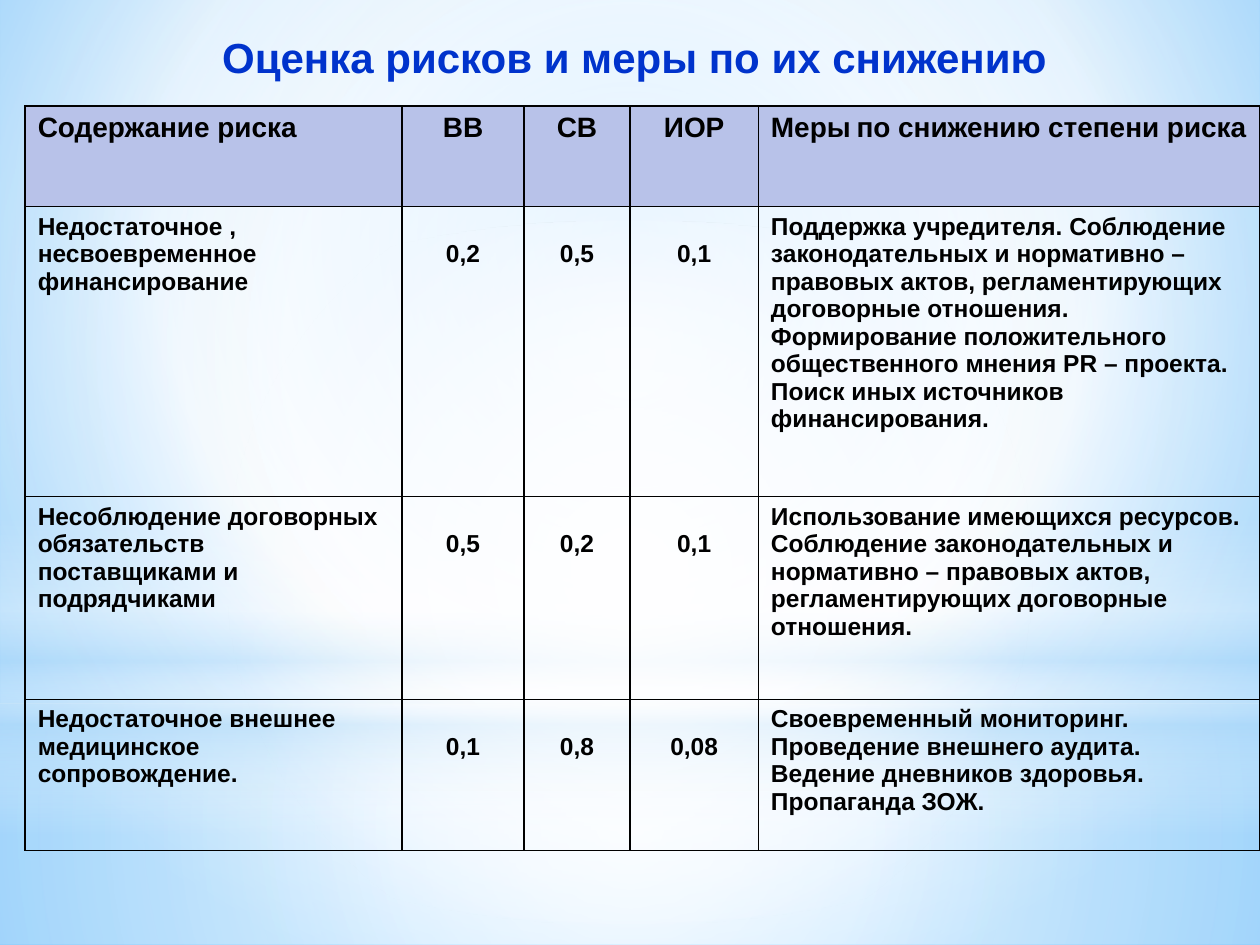
from pptx import Presentation
from pptx.dml.color import RGBColor
from pptx.enum.shapes import MSO_SHAPE
from pptx.enum.text import PP_ALIGN
from pptx.oxml import parse_xml
from pptx.oxml.ns import nsdecls, qn
from pptx.util import Pt

RECTANGLE, OVAL = MSO_SHAPE.RECTANGLE, MSO_SHAPE.OVAL
LEFT, CENTER = PP_ALIGN.LEFT, PP_ALIGN.CENTER
WIDTH, HEIGHT = 720, 540
CENTRED = (50, 50, 50, 50)
WHITE, SKY = "FFFFFF", "B4DCFA"

HEADINGS = ["Содержание риска", "ВВ", "СВ", "ИОР",
            [("Меры", 16), (" ", 12), ("по снижению степени риска", 16)]]
RISKS = [
    ["Недостаточное , несвоевременное финансирование", "0,2", "0,5", "0,1",
     "Поддержка учредителя. Соблюдение законодательных и нормативно – правовых актов, "
     "регламентирующих договорные отношения. Формирование положительного общественного "
     "мнения PR – проекта. Поиск иных источников финансирования."],
    ["Несоблюдение договорных обязательств поставщиками и подрядчиками", "0,5", "0,2", "0,1",
     "Использование имеющихся ресурсов. Соблюдение законодательных и нормативно – правовых "
     "актов, регламентирующих договорные отношения."],
    ["Недостаточное внешнее медицинское сопровождение.", "0,1", "0,8", "0,08",
     "Своевременный мониторинг. Проведение внешнего аудита. Ведение дневников здоровья. "
     "Пропаганда ЗОЖ."],
]
COLUMN_WIDTHS = [215.3, 69.8, 60.5, 73.4, 286.6]
ROW_HEIGHTS = [57.6, 165.6, 115.9, 86.4]


def rgb(value):
    return RGBColor.from_string(value)


def write(frame, text, size=14, color="000000", align=LEFT, font="Arial", bold=True):
    frame.word_wrap = True
    paragraph = frame.paragraphs[0]
    paragraph.alignment = align
    for part, part_size in [(text, size)] if isinstance(text, str) else text:
        run = paragraph.add_run()
        run.text = part
        run.font.name = font
        run.font.size = Pt(part_size)
        run.font.bold = bold
        run.font.color.rgb = rgb(color)


def shade(fill, element, stops, centre=None, angle=90):
    fill.gradient()
    marks = "".join(
        f'<a:gs pos="{position * 1000}"><a:srgbClr val="{color}">'
        f'<a:alpha val="{opacity * 1000}"/></a:srgbClr></a:gs>'
        for position, color, opacity in stops)
    if centre:
        sides = " ".join(f'{side}="{share * 1000}"' for side, share in zip("ltrb", centre))
        direction = f'<a:path path="circle"><a:fillToRect {sides}/></a:path>'
    else:
        direction = f'<a:lin ang="{angle * 60000}" scaled="0"/>'
    default = element.find(".//" + qn("a:gradFill"))
    default.getparent().replace(default, parse_xml(
        f'<a:gradFill {nsdecls("a")} rotWithShape="1"><a:gsLst>{marks}</a:gsLst>'
        f'{direction}</a:gradFill>'))


class RiskSlide:
    def __init__(self, slide, title_color="0033CC", header_fill="B8C2E9", border="000000"):
        self.slide = slide
        self.title_color = title_color
        self.header_fill = header_fill
        self.border = border

    def background(self, stops, centre):
        shade(self.slide.background.fill, self.slide.element, stops, centre)

    def glow(self, kind, top, height, stops, centre=None):
        layer = self.slide.shapes.add_shape(kind, Pt(0), Pt(top), Pt(WIDTH), Pt(height))
        layer.shadow.inherit = False
        layer.line.fill.background()
        shade(layer.fill, layer.element, stops, centre)

    def title(self, text, left, top, width, height):
        frame = self.slide.shapes.add_textbox(
            Pt(left), Pt(top), Pt(width), Pt(height)).text_frame
        frame.margin_top = Pt(6.5)
        write(frame, text, size=24, color=self.title_color, align=CENTER)

    def outline(self, cell):
        properties = cell._tc.get_or_add_tcPr()
        for index, side in enumerate(("lnL", "lnR", "lnT", "lnB")):
            properties.insert(index, parse_xml(
                f'<a:{side} {nsdecls("a")} w="{Pt(1)}"><a:solidFill>'
                f'<a:srgbClr val="{self.border}"/></a:solidFill></a:{side}>'))

    def table(self, rows, left, top, widths, heights):
        table = self.slide.shapes.add_table(
            len(rows), len(widths), Pt(left), Pt(top),
            Pt(sum(widths)), Pt(sum(heights))).table
        table.horz_banding = False
        for column, width in zip(table.columns, widths):
            column.width = Pt(width)
        for r, (row, height) in enumerate(zip(rows, heights)):
            table.rows[r].height = Pt(height)
            for c, text in enumerate(row):
                cell = table.cell(r, c)
                is_header, is_score = r == 0, 0 < c < len(row) - 1
                if is_header:
                    cell.fill.solid()
                    cell.fill.fore_color.rgb = rgb(self.header_fill)
                else:
                    cell.fill.background()
                    if is_score:
                        cell.margin_top = Pt(19.4)
                self.outline(cell)
                write(cell.text_frame, text, size=16 if is_header else 14,
                      align=CENTER if is_score else LEFT)


def main():
    deck = Presentation()
    deck.slide_width, deck.slide_height = Pt(WIDTH), Pt(HEIGHT)
    risks = RiskSlide(deck.slides.add_slide(deck.slide_layouts[6]))
    risks.background([(0, "9ED5FF", 100), (60, WHITE, 100), (100, "5BB9FF", 100)],
                     (20, 10, 20, 60))
    risks.glow(RECTANGLE, 401.8, 138.2, [(0, WHITE, 91), (37, WHITE, 76), (100, SKY, 79)], CENTRED)
    risks.glow(RECTANGLE, 0, 401.8, [(0, WHITE, 89), (48, WHITE, 62), (100, SKY, 79)], CENTRED)
    risks.glow(RECTANGLE, 296.6, 180, [(0, WHITE, 0), (29, WHITE, 30), (45, SKY, 40),
                                       (55, WHITE, 26), (65, SKY, 60), (100, WHITE, 0)])
    risks.glow(OVAL, 126, 401.8, [(0, WHITE, 100), (56, WHITE, 0)], CENTRED)
    risks.title("Оценка рисков и меры по их снижению", 16.6, 11.5, 691.9, 45.4)
    risks.table([HEADINGS] + RISKS, 14.4, 60.5, COLUMN_WIDTHS, ROW_HEIGHTS)
    deck.save("out.pptx")


if __name__ == "__main__":
    main()
